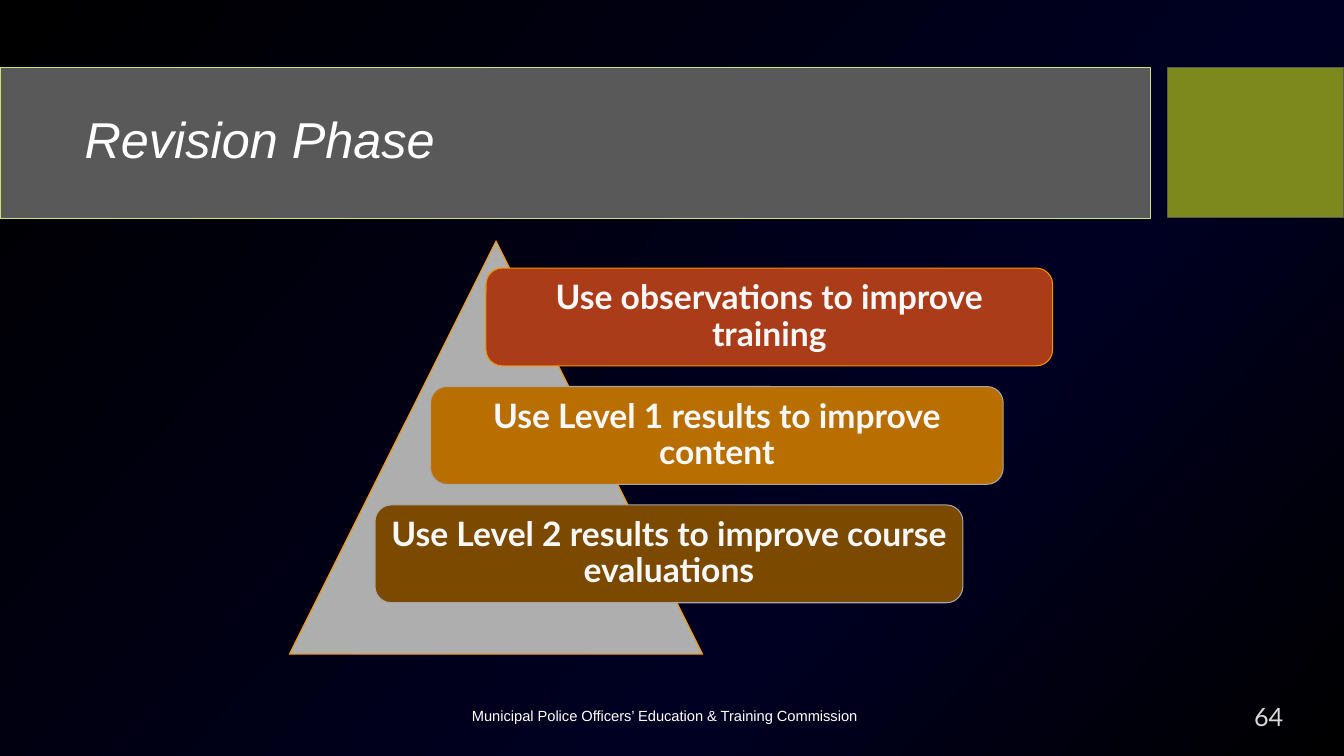
import pptx
import pptx.dml.color
import pptx.enum.shapes
import pptx.enum.text
import pptx.oxml
import pptx.oxml.ns
import pptx.util

Inches = pptx.util.Inches
Pt = pptx.util.Pt
SHAPE = pptx.enum.shapes.MSO_SHAPE
ALIGN = pptx.enum.text.PP_ALIGN
ANCHOR = pptx.enum.text.MSO_ANCHOR

COLORS = {
    "black": "000000", "navy": "000022", "gray": "595959", "lime": "D3E171",
    "olive": "7D891D", "white": "FFFFFF", "number": "D9D9D9",
    "silver": "AEAEAE", "orange": "F69200", "edge": "A7A7A7",
    "rust": "AB3C19", "amber": "B86E00", "brown": "7B4900", "label": "F8F8F8",
}
BACKGROUND_STOPS = [(0, "black"), (66, "navy"), (100, "black")]
BACKGROUND_ANGLE = 42

PANELS = [
    (SHAPE.RECTANGLE, (0, 0.67, 11.41, 1.5), "gray", "lime", 1),
    (SHAPE.RECTANGLE, (11.58, 0.67, 1.75, 1.5), "olive", "black", 1),
    (SHAPE.RECTANGLE, (11.58, 0.67, 1.75, 1.49), None, "gray", 1),
    (SHAPE.ISOSCELES_TRIANGLE, (2.87, 2.39, 4.1, 4.1), "silver", "orange", 0.75),
]
TEXTS = [
    ("Revision Phase", (0.74, 0.82, 10.51, 1.18), ALIGN.LEFT, ANCHOR.MIDDLE, 0.9,
     {"size": Pt(36), "name": "Arial", "italic": True}, "white"),
    ("Municipal Police Officers’ Education & Training Commission",
     (3.54, 6.9, 6.11, 0.4), ALIGN.CENTER, ANCHOR.MIDDLE, 1,
     {"size": Pt(10.5), "name": "Arial"}, "white"),
    ("64", (12.34, 6.91, 0.66, 0.3), ALIGN.LEFT, ANCHOR.TOP, 1,
     {"size": Pt(18), "name": "Lato"}, "number"),
]
STEPS = [
    ("Use observations to improve training", 5.62, "rust", "orange"),
    ("Use Level 1 results to improve content", 5.68, "amber", "edge"),
    ("Use Level 2 results to improve course evaluations", 5.83, "brown", "edge"),
]
STEP_LEFT, STEP_TOP, STEP_HEIGHT = 4.82, 2.66, 0.97
STEP_SHIFT, STEP_PITCH = -0.55, 1.175
STEP_FONT = {"size": Pt(24), "name": "Lato", "bold": True}


def rgb(name):
    return pptx.dml.color.RGBColor.from_string(COLORS[name])


def set_background(s):
    stops = "".join(
        f'<a:gs pos="{pos * 1000}"><a:srgbClr val="{COLORS[name]}"/></a:gs>'
        for pos, name in BACKGROUND_STOPS)
    s.background.fill.solid()
    solid = s.background._cSld.bg.bgPr[0]
    solid.getparent().replace(solid, pptx.oxml.parse_xml(
        f'<a:gradFill {pptx.oxml.ns.nsdecls("a")} rotWithShape="1">'
        f'<a:gsLst>{stops}</a:gsLst>'
        f'<a:lin ang="{BACKGROUND_ANGLE * 60000}" scaled="0"/></a:gradFill>'))


def add_panel(s, kind, box, fill, line, width):
    sp = s.shapes.add_shape(kind, *map(Inches, box))
    sp.shadow.inherit = False
    if fill:
        sp.fill.solid()
        sp.fill.fore_color.rgb = rgb(fill)
    else:
        sp.fill.background()
    sp.line.color.rgb = rgb(line)
    sp.line.width = Pt(width)
    return sp


def write(sp, text, align, anchor, spacing, font, color):
    tf = sp.text_frame
    tf.word_wrap = True
    tf.vertical_anchor = anchor
    p = tf.paragraphs[0]
    p.alignment = align
    p.line_spacing = spacing
    r = p.add_run()
    r.text = text
    for key, value in font.items():
        setattr(r.font, key, value)
    r.font.color.rgb = rgb(color)
    return tf


def main():
    prs = pptx.Presentation()
    prs.slide_width, prs.slide_height = Inches(13.33), Inches(7.5)
    s = prs.slides.add_slide(prs.slide_layouts[6])
    set_background(s)
    for panel in PANELS:
        add_panel(s, *panel)
    for text, box, *style in TEXTS:
        write(s.shapes.add_textbox(*map(Inches, box)), text, *style)
    for i, (text, width, fill, line) in enumerate(STEPS):
        box = (STEP_LEFT + i * STEP_SHIFT, STEP_TOP + i * STEP_PITCH,
               width, STEP_HEIGHT)
        sp = add_panel(s, SHAPE.ROUNDED_RECTANGLE, box, fill, line, 0.75)
        tf = write(sp, text, ALIGN.CENTER, ANCHOR.MIDDLE, 0.9, STEP_FONT, "label")
        for side in ("left", "top", "right", "bottom"):
            setattr(tf, f"margin_{side}", Inches(0.1))
    prs.save("out.pptx")


if __name__ == "__main__":
    main()
